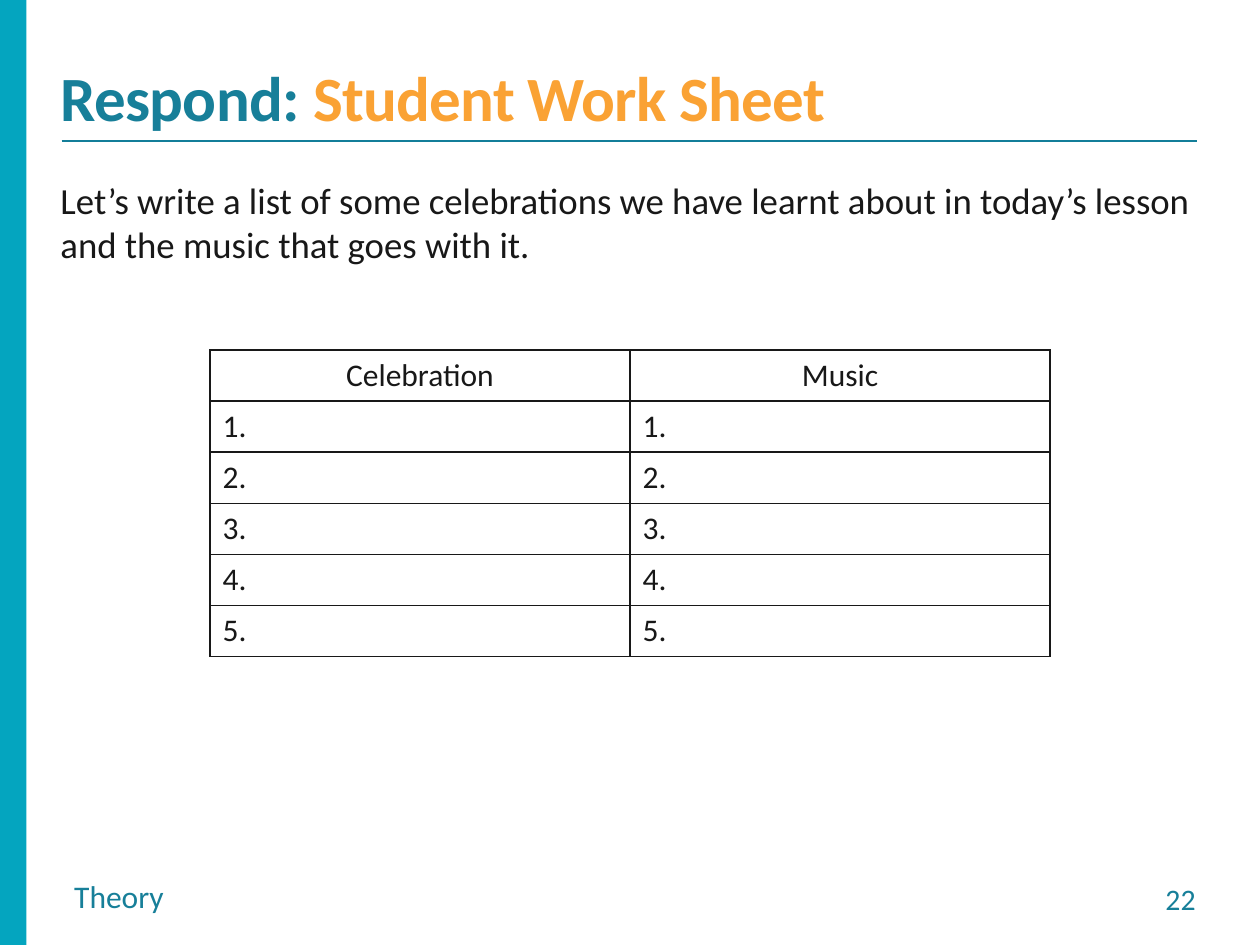
"""Build the student work sheet slide on celebrations and their music."""
from dataclasses import dataclass

from lxml import etree
from pptx import Presentation, util as u
from pptx.dml.color import RGBColor
from pptx.enum import shapes, text
from pptx.oxml import ns


@dataclass(frozen=True)
class Theme:
    font: str = "Calibri"
    teal: str = "177F99"
    rule: str = "137E99"
    bar: str = "04A5BF"
    accent: str = "FAA234"
    ink: str = "181818"
    title_size: int = 36
    body_size: int = 21
    label_size: int = 18
    number_size: int = 17
    title_tracking: int = -40
    rule_width: float = 0.75
    border_width: float = 1


class WorkSheet:
    """Hold the theme and slide; boxes are given in percent of the slide."""

    def __init__(self, theme):
        self.theme = theme
        self.deck = Presentation()
        self.deck.slide_width, self.deck.slide_height = u.Inches(10), u.Inches(7.5)
        self.slide = self.deck.slides.add_slide(self.deck.slide_layouts[1])

    def box(self, *shares):
        sides = (self.deck.slide_width, self.deck.slide_height) * 2
        return [int(side * share / 100) for side, share in zip(sides, shares)]

    def style(self, paragraph, size, color, bold=False, align=text.PP_ALIGN.LEFT):
        paragraph.alignment = align
        paragraph.space_before = u.Pt(0)
        font = paragraph.font
        font.name, font.size, font.bold = self.theme.font, u.Pt(size), bold
        font.color.rgb = RGBColor.from_string(color)

    def frame(self, holder, anchor, insets):
        frame = holder.text_frame
        frame.word_wrap = True
        frame.auto_size = text.MSO_AUTO_SIZE.NONE
        frame.vertical_anchor = anchor
        (frame.margin_left, frame.margin_top,
         frame.margin_right, frame.margin_bottom) = map(u.Inches, insets)
        return frame

    def place(self, holder, shares):
        holder.left, holder.top, holder.width, holder.height = self.box(*shares)
        return self.frame(holder, text.MSO_ANCHOR.TOP, (0, 0, 0, 0)).paragraphs[0]

    def bar(self, shares):
        bar = self.slide.shapes.add_shape(shapes.MSO_SHAPE.RECTANGLE, *self.box(*shares))
        bar.shadow.inherit = False
        bar.fill.solid()
        bar.fill.fore_color.rgb = RGBColor.from_string(self.theme.bar)
        bar.line.fill.background()

    def rule(self, start, end):
        rule = self.slide.shapes.add_connector(
            shapes.MSO_CONNECTOR.STRAIGHT, *self.box(*start, *end))
        rule.line.color.rgb = RGBColor.from_string(self.theme.rule)
        rule.line.width = u.Pt(self.theme.rule_width)
        etree.SubElement(rule._element.spPr, ns.qn("a:effectLst"))

    def title(self, shares, parts):
        heading = self.place(self.slide.shapes.title, shares)
        self.style(heading, self.theme.title_size, self.theme.teal, bold=True)
        for wording, color in parts:
            run = heading.add_run()
            run.text = wording
            run.font.color.rgb = RGBColor.from_string(color)
            run._r.get_or_add_rPr().set("spc", str(self.theme.title_tracking))

    def body(self, shares, wording):
        task = self.place(self.slide.placeholders[1], shares)
        task.text = wording
        properties = task._p.get_or_add_pPr()
        properties.set("marL", "0")
        properties.set("indent", "0")
        etree.SubElement(properties, ns.qn("a:buNone"))
        self.style(task, self.theme.body_size, self.theme.ink)

    def label(self, shares, wording, size, align, anchor, insets):
        label = self.slide.shapes.add_textbox(*self.box(*shares))
        line = self.frame(label, anchor, insets).paragraphs[0]
        line.text = wording
        self.style(line, size, self.theme.teal, align=align)

    def border(self, cell):
        properties = cell._tc.get_or_add_tcPr()
        for side in ("lnL", "lnR", "lnT", "lnB"):
            edge = etree.SubElement(properties, ns.qn(f"a:{side}"),
                                    w=str(u.Pt(self.theme.border_width)))
            fill = etree.SubElement(edge, ns.qn("a:solidFill"))
            etree.SubElement(fill, ns.qn("a:srgbClr"), val=self.theme.ink)

    def table(self, shares, rows):
        grid = self.slide.shapes.add_table(len(rows), len(rows[0]), *self.box(*shares)).table
        grid.first_row = grid.horz_banding = False
        for row, entries in enumerate(rows):
            align = text.PP_ALIGN.LEFT if row else text.PP_ALIGN.CENTER
            for column, entry in enumerate(entries):
                cell = grid.cell(row, column)
                cell.text = entry
                self.border(cell)
                cell.fill.background()
                self.style(cell.text_frame.paragraphs[0], self.theme.label_size,
                           self.theme.ink, align=align)


def main():
    theme = Theme()
    sheet = WorkSheet(theme)
    sheet.rule((4.9, 14.93), (95, 14.93))
    sheet.bar((0, 0, 2.1, 100))
    sheet.label((88.6, 92.4, 6.3, 4.53), "22", theme.number_size,
                text.PP_ALIGN.RIGHT, text.MSO_ANCHOR.BOTTOM, (0, 0.05, 0, 0))
    sheet.title((4.8, 6.2, 90.1, 7.87),
                [("Respond: ", theme.teal), ("Student Work Sheet", theme.accent)])
    sheet.body((4.8, 18.8, 90.2, 16),
               "Let’s write a list of some celebrations we have learnt about "
               "in today’s lesson and the music that goes with it.")
    sheet.label((4.9, 92.1, 22.9, 4.27), "Theory", theme.label_size,
                text.PP_ALIGN.LEFT, text.MSO_ANCHOR.TOP, (0.1, 0.05, 0.1, 0.05))
    sheet.table((16.67, 37.04, 66.67, 32.4),
                [("Celebration", "Music")] + [(f"{n}.",) * 2 for n in range(1, 6)])
    sheet.deck.save("out.pptx")


if __name__ == "__main__":
    main()
